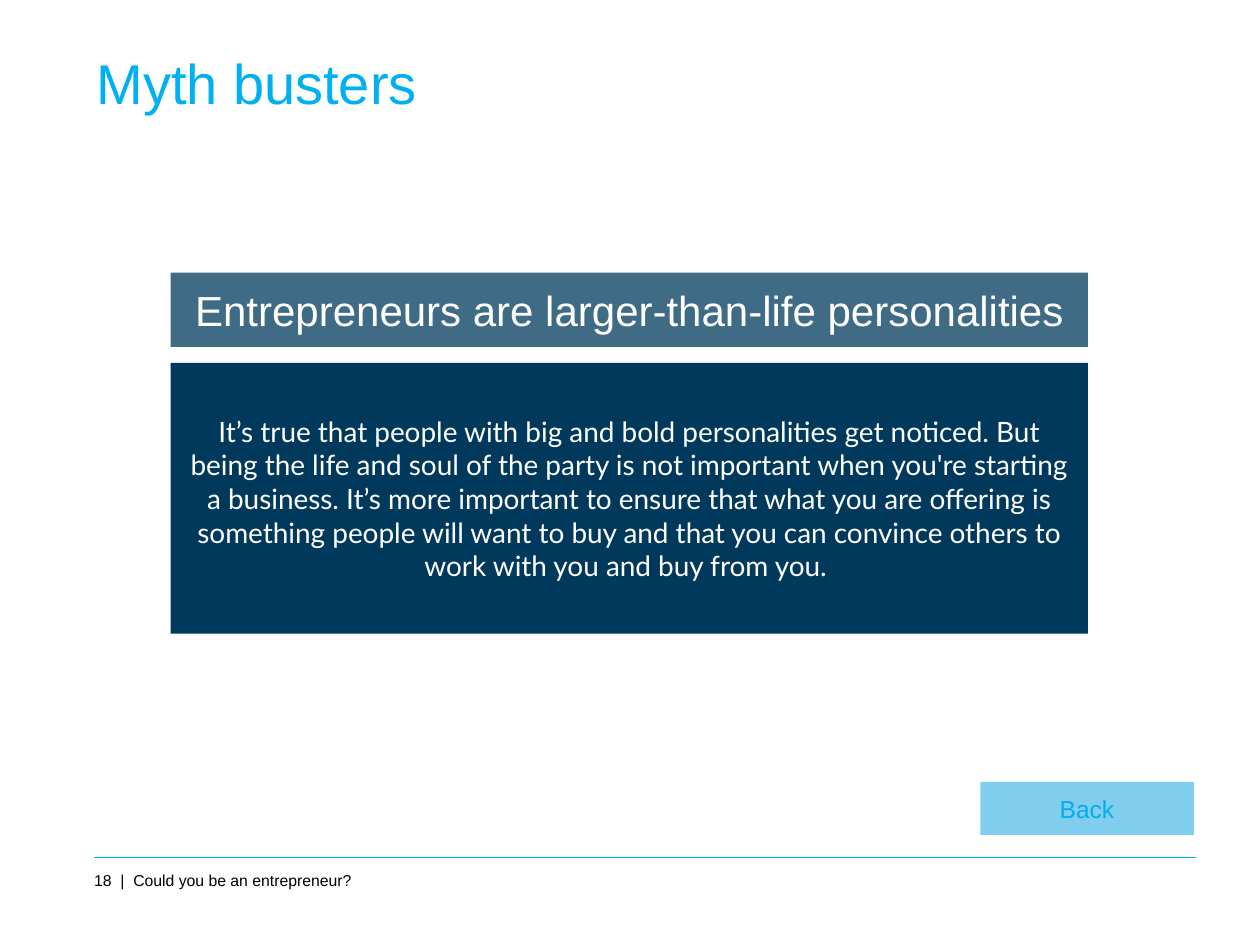
import pptx
import pptx.util
import pptx.dml.color
import pptx.enum.shapes
import pptx.enum.text
import pptx.oxml.ns
import lxml.etree

Inches, Pt = pptx.util.Inches, pptx.util.Pt
Align = pptx.enum.text.PP_ALIGN
Anchor = pptx.enum.text.MSO_ANCHOR

WIDE, HIGH = 10, 7.5
HUES = {"rule": "00AEEF", "title": "00B0F0", "navy": "00395C", "steel": "406B85",
        "pale": "80CDED", "white": "FFFFFF", "black": "000000"}

ANSWER = ("It’s true that people with big and bold personalities get noticed. "
          "But being the life and soul of the party is not important when you're "
          "starting a business. It’s more important to ensure that what you are "
          "offering is something people will want to buy and that you can convince "
          "others to work with you and buy from you. ")

CARD = {"left": 13.55, "width": 72.8}
ITEMS = [
    ("18  |  Could you be an entrepreneur?",
     dict(left=7.48, top=92.13, width=31.7, height=2, size=9, color="black",
          anchor=Anchor.BOTTOM)),
    (ANSWER, dict(CARD, top=38.4, height=28.67, size=16, font="Lato",
                  fill="navy", inset=0.15)),
    ("Back", dict(left=77.8, top=82.75, width=16.95, height=5.6, size=14,
                  color="rule", fill="pale")),
    ("Entrepreneurs are larger-than-life personalities",
     dict(CARD, top=28.85, height=7.87, size=24, fill="steel")),
    ("Myth busters", dict(left=7.65, top=5.07, width=88.2, height=7.2, size=32,
                          color="title")),
]
RULE = {"left": 7.45, "right": 94.95, "top": 90.75}


def across(share):
    return Inches(WIDE * share / 100)


def down(share):
    return Inches(HIGH * share / 100)


def hue(name):
    return pptx.dml.color.RGBColor.from_string(HUES[name])


def put(text, *, left, top, width, height, size, font="Arial", color="white",
        fill=None, inset=0, anchor=Anchor.MIDDLE):
    place = across(left), down(top), across(width), down(height)
    if fill:
        box = slide.shapes.add_shape(pptx.enum.shapes.MSO_SHAPE.RECTANGLE, *place)
        box.shadow.inherit = False
        box.fill.solid()
        box.fill.fore_color.rgb = hue(fill)
        box.line.fill.background()
    else:
        box = slide.shapes.add_textbox(*place)
    frame = box.text_frame
    frame.word_wrap = True
    frame.vertical_anchor = anchor
    frame.margin_left = frame.margin_right = Inches(inset)
    frame.margin_top = frame.margin_bottom = Inches(inset)
    para = frame.paragraphs[0]
    para.alignment = Align.CENTER if fill else Align.LEFT
    run = para.add_run()
    run.text = text
    run.font.name = font
    run.font.size = Pt(size)
    run.font.color.rgb = hue(color)


deck = pptx.Presentation()
deck.slide_width, deck.slide_height = Inches(WIDE), Inches(HIGH)
slide = deck.slides.add_slide(deck.slide_layouts[6])

rule = slide.shapes.add_connector(
    pptx.enum.shapes.MSO_CONNECTOR.STRAIGHT,
    across(RULE["left"]), down(RULE["top"]), across(RULE["right"]), down(RULE["top"]))
rule.line.color.rgb = hue("rule")
rule.line.width = Pt(1)
lxml.etree.SubElement(rule._element.spPr, pptx.oxml.ns.qn("a:effectLst"))

for text, style in ITEMS:
    put(text, **style)

deck.save("out.pptx")
